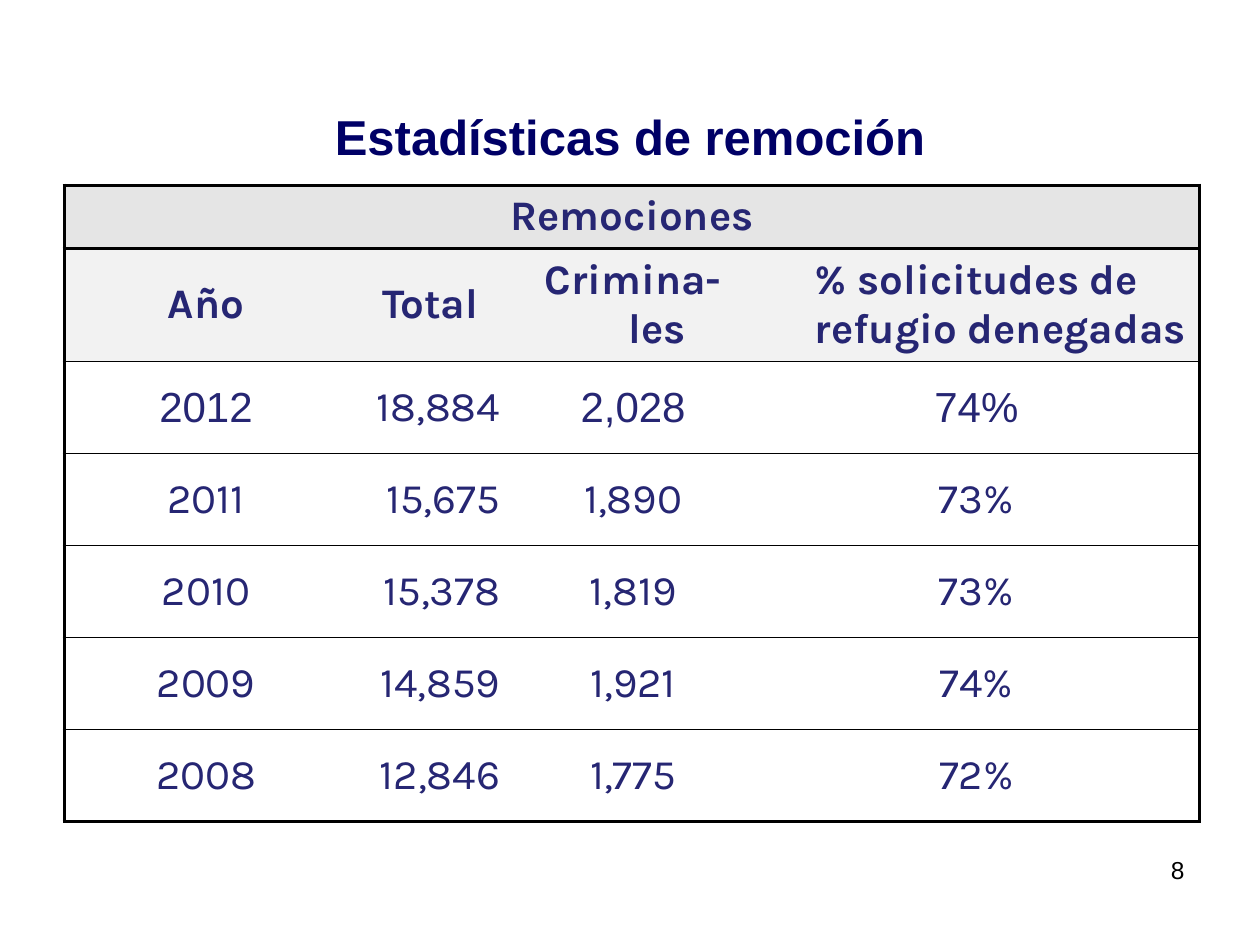
from lxml.etree import SubElement
from pptx import Presentation
from pptx.dml.color import RGBColor
from pptx.enum.text import MSO_ANCHOR, PP_ALIGN
from pptx.oxml.ns import qn
from pptx.util import Inches, Pt

TITLE = "Estadísticas de remoción"
PAGE_NUMBER = "8"
ROWS = [
    ("Remociones", "", "", ""),
    ("Año", "Total", "Crimina-les", "% solicitudes de refugio denegadas"),
    ("2012", "18,884", "2,028", "74%"),
    ("2011", "15,675", "1,890", "73%"),
    ("2010", "15,378", "1,819", "73%"),
    ("2009", "14,859", "1,921", "74%"),
    ("2008", "12,846", "1,775", "72%"),
]
COLUMN_WIDTHS = [2.25, 1.31, 1.91, 3.54]
ROW_HEIGHTS = [0.42, 0.88] + [0.73] * 5
HEADER_FILLS = ["E5E5E5", "F2F2F2"]
ARIAL_CELLS = {(2, 0), (2, 2), (2, 3)}
LAST_ROW = len(ROWS) - 1
LAST_COLUMN = len(COLUMN_WIDTHS) - 1


def color(value):
    return RGBColor.from_string(value)


def style(paragraph, align, name, size, value, bold=False):
    paragraph.alignment = align
    font = paragraph.font
    font.name, font.size, font.bold = name, Pt(size), bold
    font.color.rgb = color(value)


def add_text(page, text, place, anchor, *look):
    box = page.shapes.add_textbox(*map(Inches, place))
    frame = box.text_frame
    frame.word_wrap = True
    frame.vertical_anchor = anchor
    frame.text = text
    style(frame.paragraphs[0], *look)


def set_borders(cell, row, column):
    widths = {
        "a:lnL": 2 if row == 0 or column == 0 else 0,
        "a:lnR": 2 if row == 0 or column == LAST_COLUMN else 0,
        "a:lnT": 2 if row <= 1 else 1,
        "a:lnB": 2 if row in (0, LAST_ROW) else 1,
    }
    properties = cell._tc.get_or_add_tcPr()
    for index, (tag, width) in enumerate(widths.items()):
        line = SubElement(properties, qn(tag), w=str(Pt(width)))
        properties.insert(index, line)
        if width:
            fill = SubElement(line, qn("a:solidFill"))
            SubElement(fill, qn("a:srgbClr"), val="000000")
        else:
            SubElement(line, qn("a:noFill"))


def fill_cell(cell, text, row, column):
    cell.vertical_anchor = MSO_ANCHOR.MIDDLE
    if row < len(HEADER_FILLS):
        cell.fill.solid()
        cell.fill.fore_color.rgb = color(HEADER_FILLS[row])
    else:
        cell.fill.background()
    set_borders(cell, row, column)
    if not text:
        return
    cell.text = text
    paragraph = cell.text_frame.paragraphs[0]
    indent = paragraph._p.get_or_add_pPr()
    indent.set("marL", str(Inches(0.38)))
    indent.set("indent", str(Inches(-0.38)))
    align = PP_ALIGN.RIGHT if row > 1 and column == 1 else PP_ALIGN.CENTER
    name = "Arial" if (row, column) in ARIAL_CELLS else "Karla"
    style(paragraph, align, name, 24, "262673", row < 2)


def add_statistics(page):
    frame = page.shapes.add_table(
        len(ROWS), len(COLUMN_WIDTHS), Inches(0.51), Inches(1.47),
        Inches(sum(COLUMN_WIDTHS)), Inches(sum(ROW_HEIGHTS)))
    table = frame.table
    table.first_row = table.horz_banding = False
    for column, width in zip(table.columns, COLUMN_WIDTHS):
        column.width = Inches(width)
    for row, height in zip(table.rows, ROW_HEIGHTS):
        row.height = Inches(height)
    table.cell(0, 0).merge(table.cell(0, LAST_COLUMN))
    for row, texts in enumerate(ROWS):
        for column, text in enumerate(texts):
            fill_cell(table.cell(row, column), text, row, column)


def main():
    deck = Presentation()
    deck.slide_width, deck.slide_height = Inches(10), Inches(7.5)
    page = deck.slides.add_slide(deck.slide_layouts[6])
    add_text(page, TITLE, (0.5, 0.76, 9, 0.64), MSO_ANCHOR.MIDDLE,
             PP_ALIGN.CENTER, "Arial", 28, "000066", True)
    add_statistics(page)
    add_text(page, PAGE_NUMBER, (7.17, 6.74, 2.33, 0.52), MSO_ANCHOR.TOP,
             PP_ALIGN.RIGHT, "Arial", 14, "000000")
    deck.save("out.pptx")


if __name__ == "__main__":
    main()
